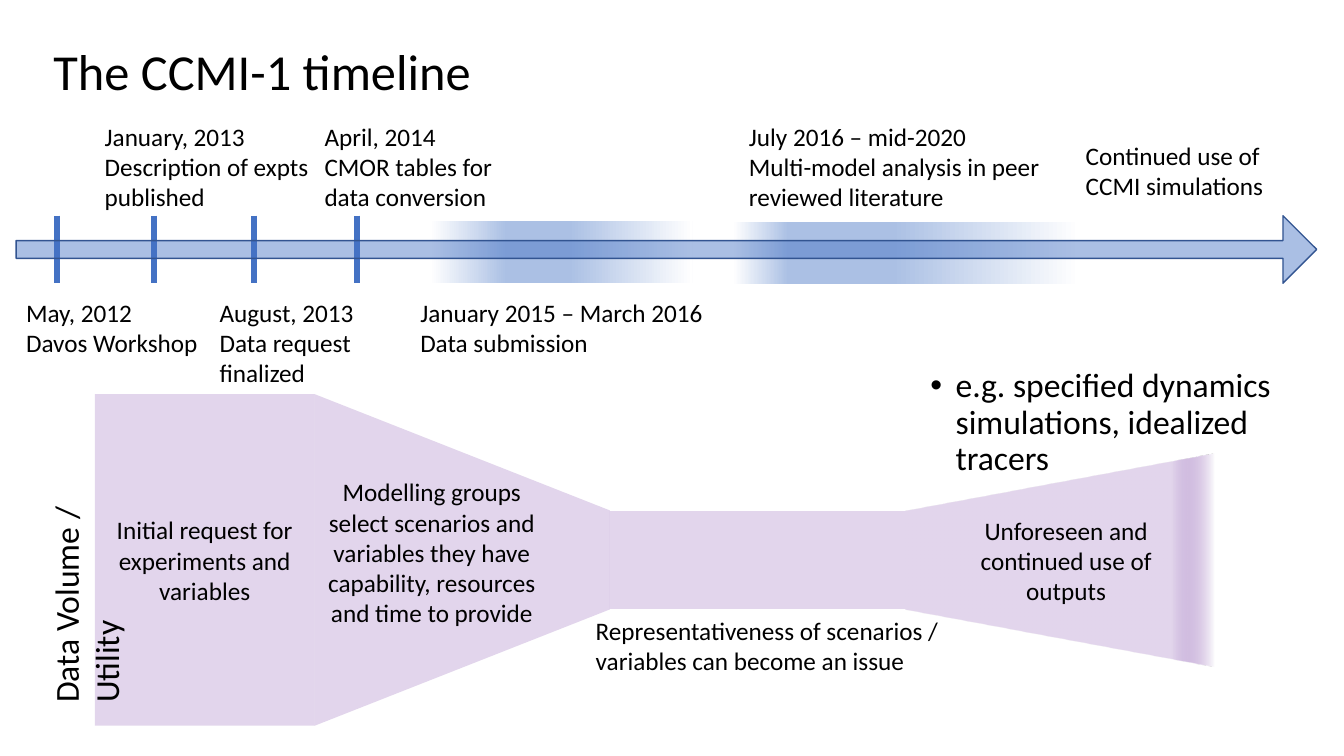
import pptx
import pptx.util
import pptx.dml.color
import pptx.enum.shapes
import pptx.enum.text
import pptx.oxml
import lxml.etree

Inches = pptx.util.Inches
Pt = pptx.util.Pt
rgb = pptx.dml.color.RGBColor.from_string
MSO_SHAPE = pptx.enum.shapes.MSO_SHAPE
ANCHOR = pptx.enum.text.MSO_ANCHOR
ALIGN = pptx.enum.text.PP_ALIGN
qn = pptx.oxml.ns.qn


def write(sp, lines, size=18, align=ALIGN.LEFT, spacing=None):
    tf = sp.text_frame
    for i, line in enumerate(lines):
        p = tf.paragraphs[0] if i == 0 else tf.add_paragraph()
        p.alignment = align
        p.line_spacing = spacing
        r = p.add_run()
        r.text = line
        for name, value in {"size": Pt(size), "name": "Calibri"}.items():
            setattr(r.font, name, value)
        r.font.color.rgb = rgb("000000")
    return tf


def add_block(kind, box, stops, ccw_angle=0):
    sp = s.shapes.add_shape(kind, *map(Inches, box))
    sp.shadow.inherit = False
    sp.line.fill.background()
    if len(stops) == 1:
        sp.fill.solid()
        sp.fill.fore_color.rgb = rgb(stops[0][1])
        clr = next(sp._element.spPr.iter(qn("a:srgbClr")))
        lxml.etree.SubElement(clr, qn("a:alpha"), val=str(stops[0][2] * 1000))
        return sp
    sp.fill.gradient()
    sp.fill.gradient_angle = ccw_angle
    stop_list = next(sp._element.spPr.iter(qn("a:gsLst")))
    for old in list(stop_list):
        stop_list.remove(old)
    for pos, colour, alpha in stops:
        gs = lxml.etree.SubElement(stop_list, qn("a:gs"), pos=str(pos * 1000))
        clr = lxml.etree.SubElement(gs, qn("a:srgbClr"), val=colour)
        lxml.etree.SubElement(clr, qn("a:alpha"), val=str(alpha * 1000))
    return sp


prs = pptx.Presentation()
prs.slide_width = Inches(13.33)
prs.slide_height = Inches(7.5)
s = prs.slides.add_slide(prs.slide_layouts[5])

title = s.shapes.title
for name, value in {"left": 0.43, "top": 0.4, "width": 11.5, "height": 0.67}.items():
    setattr(title, name, Inches(value))
tf = write(title, ["The CCMI-1 timeline"], 36, spacing=0.9)
tf.vertical_anchor = ANCHOR.MIDDLE

example = s.shapes.add_textbox(Inches(9.13), Inches(3.61), Inches(4.04), Inches(1.17))
tf = write(example, ["e.g. specified dynamics simulations, idealized tracers"], 24, spacing=0.9)
tf.word_wrap = True
pPr = tf.paragraphs[0]._p.get_or_add_pPr()
pPr.set("marL", str(Inches(0.25)))
pPr.set("indent", str(Inches(-0.25)))
lxml.etree.SubElement(pPr, qn("a:buFont"), typeface="Arial")
lxml.etree.SubElement(pPr, qn("a:buChar"), char="•")

for x in (0.57, 1.53, 2.52, 3.54):
    tick = s.shapes.add_connector(
        pptx.enum.shapes.MSO_CONNECTOR.STRAIGHT, Inches(x), Inches(2.14), Inches(x), Inches(2.81))
    tick.line.color.rgb = rgb("4472C4")
    tick.line.width = Pt(4.25)
    lxml.etree.SubElement(tick._element.spPr, qn("a:effectLst"))

for box, rise, fall in [((4.27, 2.19, 2.6, 0.62), 29, 53), ((7.27, 2.2, 3.44, 0.62), 16, 46)]:
    add_block(MSO_SHAPE.RECTANGLE, box, [
        (0, "FFFFFF", 100), (rise, "ABC0E4", 100), (fall, "ABC0E4", 100), (100, "FFFFFF", 100)])

arrow = add_block(MSO_SHAPE.RIGHT_ARROW, (0.16, 2.14, 12.9, 0.67), [(0, "4472C4", 45)])
arrow.adjustments[0] = 0.263
arrow.line.color.rgb = rgb("325491")
arrow.line.width = Pt(1)

lilac = [(0, "7030A0", 20)]
request = add_block(MSO_SHAPE.RECTANGLE, (0.94, 3.91, 2.18, 3.29), lilac)
selection = add_block(MSO_SHAPE.TRAPEZOID, (2.94, 4.09, 3.29, 2.93), lilac)
add_block(MSO_SHAPE.RECTANGLE, (6.05, 5.07, 2.93, 0.97), lilac)
reuse = add_block(MSO_SHAPE.TRAPEZOID, (9.46, 4.03, 2.11, 3.06),
                  lilac + [(86, "7030A0", 20), (100, "FFFFFF", 100)], 270)

for sp, rotation, taper, vert, insets in [
    (selection, 90, 0.394, "vert270", (0.1, 0.04, 0.2, 0.12)),
    (reuse, 270, 0.269, "vert", (0.1, 0.04, 0.1, 0.47)),
]:
    sp.rotation = rotation
    sp.adjustments[0] = taper
    sp.text_frame._txBody.bodyPr.set("vert", vert)
    for side, inset in zip(("left", "top", "right", "bottom"), insets):
        setattr(sp.text_frame, "margin_" + side, Inches(inset))

for sp, text in [
    (request, "Initial request for experiments and variables"),
    (selection, "Modelling groups select scenarios and variables they have capability, "
                "resources and time to provide"),
    (reuse, "Unforeseen and continued use of outputs"),
]:
    tf = write(sp, [text], align=ALIGN.CENTER)
    tf.word_wrap = True
    tf.vertical_anchor = ANCHOR.MIDDLE

labels = [
    (0.16, 2.9, 1.92, 0.71, False, ["May, 2012", "Davos Workshop"]),
    (0.94, 1.15, 2.37, 1.01, True, ["January, 2013", "Description of expts published"]),
    (2.08, 2.9, 1.8, 1.01, True, ["August, 2013", "Data request finalized"]),
    (3.12, 1.15, 1.92, 1.01, True, ["April, 2014", "CMOR tables for data conversion"]),
    (4.07, 2.9, 3.04, 0.71, False, ["January 2015 – March 2016", "Data submission"]),
    (7.33, 1.15, 3.33, 1.01, True,
     ["July 2016 – mid-2020", "Multi-model analysis in peer reviewed literature"]),
    (10.67, 1.34, 2.43, 0.71, True, ["Continued use of CCMI simulations"]),
    (5.81, 6.05, 3.65, 0.71, True,
     ["Representativeness of scenarios / variables can become an issue"]),
]
for x, y, w, h, wrap, lines in labels:
    label = s.shapes.add_textbox(Inches(x), Inches(y), Inches(w), Inches(h))
    tf = write(label, lines)
    tf.word_wrap = wrap
    tf.auto_size = pptx.enum.text.MSO_AUTO_SIZE.SHAPE_TO_FIT_TEXT

axis = s.shapes.add_textbox(Inches(0.4), Inches(4.05), Inches(0.61), Inches(3.02))
tf = write(axis, ["Data Volume / Utility"], 24)
tf.word_wrap = True
tf.auto_size = pptx.enum.text.MSO_AUTO_SIZE.SHAPE_TO_FIT_TEXT
tf._txBody.bodyPr.set("vert", "vert270")

prs.save("out.pptx")
